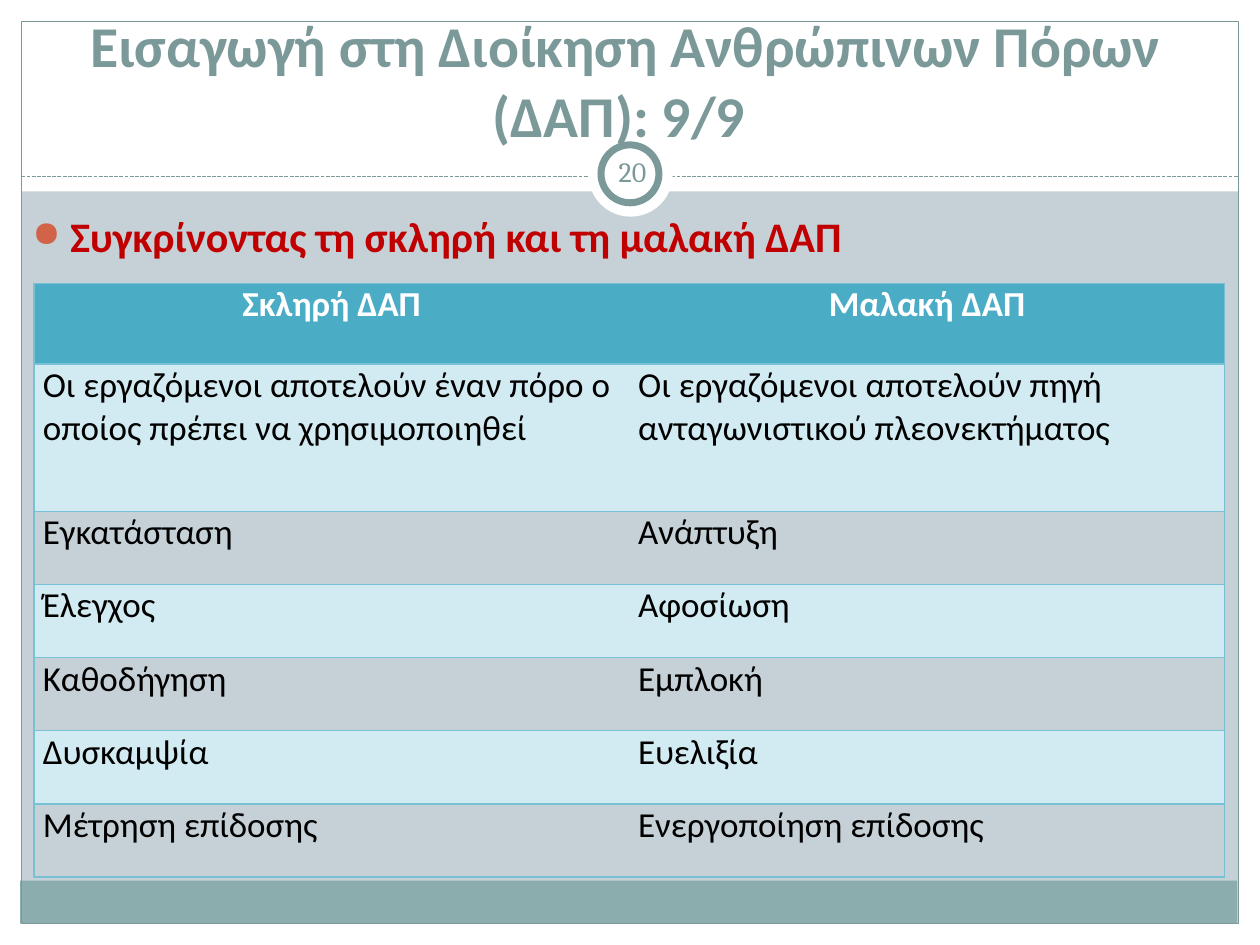
"""Build the slide that compares hard and soft human resource management."""
from lxml import etree
from pptx import Presentation
from pptx import util as u
from pptx.dml.color import RGBColor
from pptx.enum import dml, shapes, text
from pptx.oxml import parse_xml
from pptx.oxml.ns import nsdecls, qn

WHITE = RGBColor(0xFF, 0xFF, 0xFF)
BLACK = RGBColor(0, 0, 0)
BACKDROP = RGBColor(0xC5, 0xD1, 0xD7)
SAGE = RGBColor(0x7C, 0x99, 0x9A)
FOOTER = RGBColor(0x8C, 0xAD, 0xAE)
RED = RGBColor(0xC0, 0, 0)
ORANGE = RGBColor(0xD1, 0x63, 0x49)
HEADER = RGBColor(0x4B, 0xAC, 0xC6)
BAND = RGBColor(0xD2, 0xEA, 0xF1)
BORDER = RGBColor(0x78, 0xC0, 0xD4)
NO_GRID_STYLE = "{2D5ABB26-0587-4C30-8999-92F81FD0307C}"
RECT = shapes.MSO_SHAPE.RECTANGLE
OVAL = shapes.MSO_SHAPE.OVAL


def add_run(paragraph, words, size, color, bold=False, font="Calibri"):
    run = paragraph.add_run()
    run.text = words
    run.font.name = font
    run.font.size = u.Pt(size)
    run.font.bold = bold
    run.font.color.rgb = color


def add_border(cell, side):
    cell._tc.get_or_add_tcPr().append(parse_xml(
        f'<a:{side} {nsdecls("a")} w="12700"><a:solidFill>'
        f'<a:srgbClr val="{BORDER}"/></a:solidFill></a:{side}>'))


prs = Presentation()
prs.slide_width, prs.slide_height = u.Inches(10), u.Inches(7.5)
slide = prs.slides.add_slide(prs.slide_layouts[5])
slide.background.fill.solid()
slide.background.fill.fore_color.rgb = BACKDROP

divider = slide.shapes.add_connector(
    shapes.MSO_CONNECTOR.STRAIGHT,
    u.Inches(0.17), u.Inches(1.4), u.Inches(9.83), u.Inches(1.4))
divider.line.color.rgb = SAGE
divider.line.width = u.Pt(0.75)
divider.line.dash_style = dml.MSO_LINE.SQUARE_DOT
etree.SubElement(divider._element.spPr, qn("a:effectLst"))

decorations = [
    (RECT, 0, 7.33, 10, 0.17, WHITE, 0),
    (RECT, 0, 0, 10, 1.52, WHITE, 0),
    (RECT, 0, 0, 0.17, 7.5, WHITE, 0),
    (RECT, 9.83, 0, 0.17, 7.5, WHITE, 0),
    (RECT, 0.16, 6.99, 9.66, 0.34, FOOTER, 0),
    (RECT, 0.17, 0.17, 9.66, 7.16, None, 0.75),
    (OVAL, 4.67, 1.05, 0.67, 0.67, WHITE, 0),
    (OVAL, 4.77, 1.15, 0.46, 0.46, WHITE, 4),
]
for kind, left, top, width, height, fill, outline in decorations:
    if kind == OVAL:
        slide.shapes._spTree.append(divider._element) if not outline else None
    part = slide.shapes.add_shape(
        kind, u.Inches(left), u.Inches(top), u.Inches(width), u.Inches(height))
    part.shadow.inherit = False
    if fill is None:
        part.fill.background()
    else:
        part.fill.solid()
        part.fill.fore_color.rgb = fill
    if outline:
        part.line.color.rgb = SAGE
        part.line.width = u.Pt(outline)
    else:
        part.line.fill.background()

page_number = slide.shapes.add_textbox(
    u.Inches(4.77), u.Inches(1.12), u.Inches(0.5), u.Inches(0.48)).text_frame
page_number.word_wrap = True
page_number.vertical_anchor = text.MSO_ANCHOR.MIDDLE
page_number.margin_left = page_number.margin_right = u.Inches(0.05)
page_number.paragraphs[0].alignment = text.PP_ALIGN.CENTER
add_run(page_number.paragraphs[0], "20", 16, SAGE, font="Cambria")

comparison = [
    ("Σκληρή ΔΑΠ", "Μαλακή ΔΑΠ"),
    ("Οι εργαζόμενοι αποτελούν έναν πόρο ο οποίος πρέπει να χρησιμοποιηθεί",
     "Οι εργαζόμενοι αποτελούν πηγή ανταγωνιστικού πλεονεκτήματος"),
    ("Εγκατάσταση", "Ανάπτυξη"),
    ("Έλεγχος", "Αφοσίωση"),
    ("Καθοδήγηση", "Εμπλοκή"),
    ("Δυσκαμψία", "Ευελιξία"),
    ("Μέτρηση επίδοσης", "Ενεργοποίηση επίδοσης"),
]
row_heights = [0.64, 1.17] + [0.58] * 5
table = slide.shapes.add_table(
    len(comparison), 2, u.Inches(0.27), u.Inches(2.25),
    u.Inches(9.45), u.Inches(sum(row_heights))).table
table.horz_banding = False
table._tbl.tblPr.find(qn("a:tableStyleId")).text = NO_GRID_STYLE
for column in table.columns:
    column.width = u.Inches(4.725)
for row, (height, entries) in enumerate(zip(row_heights, comparison)):
    table.rows[row].height = u.Inches(height)
    for col, words in enumerate(entries):
        cell = table.cell(row, col)
        cell.margin_left = cell.margin_right = u.Inches(0.07)
        cell.margin_top = cell.margin_bottom = 0
        for side in ("lnR" if col else "lnL", "lnT", "lnB"):
            add_border(cell, side)
        if row == 0 or row % 2:
            cell.fill.solid()
            cell.fill.fore_color.rgb = BAND if row else HEADER
        else:
            cell.fill.background()
        entry = cell.text_frame.paragraphs[0]
        entry.alignment = text.PP_ALIGN.LEFT if row else text.PP_ALIGN.CENTER
        add_run(entry, words, 20, BLACK if row else WHITE, bold=row == 0)

subtitle = slide.shapes.add_textbox(
    u.Inches(0.16), u.Inches(1.62), u.Inches(9.73), u.Inches(0.55)).text_frame
subtitle.word_wrap = True
bullet = subtitle.paragraphs[0]._p.get_or_add_pPr()
bullet.set("marL", str(u.Inches(0.3)))
bullet.set("indent", str(u.Inches(-0.3)))
for tag in (f'<a:buClr {nsdecls("a")}><a:srgbClr val="{ORANGE}"/></a:buClr>',
            f'<a:buSzPct {nsdecls("a")} val="85000"/>',
            f'<a:buChar {nsdecls("a")} char="●"/>'):
    bullet.append(parse_xml(tag))
add_run(subtitle.paragraphs[0], "Συγκρίνοντας τη σκληρή και τη μαλακή ΔΑΠ",
        24, RED, bold=True)

title = slide.shapes.title
title.left, title.top = u.Inches(0.12), u.Inches(0.21)
title.width, title.height = u.Inches(9.69), u.Inches(1.02)
title.text_frame.word_wrap = True
title.text_frame.auto_size = text.MSO_AUTO_SIZE.NONE
title.text_frame.vertical_anchor = text.MSO_ANCHOR.BOTTOM
title.text_frame.paragraphs[0].alignment = text.PP_ALIGN.CENTER
add_run(title.text_frame.paragraphs[0],
        "Εισαγωγή στη Διοίκηση Ανθρώπινων Πόρων (ΔΑΠ): 9/9 ", 33, SAGE, bold=True)
slide.shapes._spTree.append(title._element)

prs.save("out.pptx")
